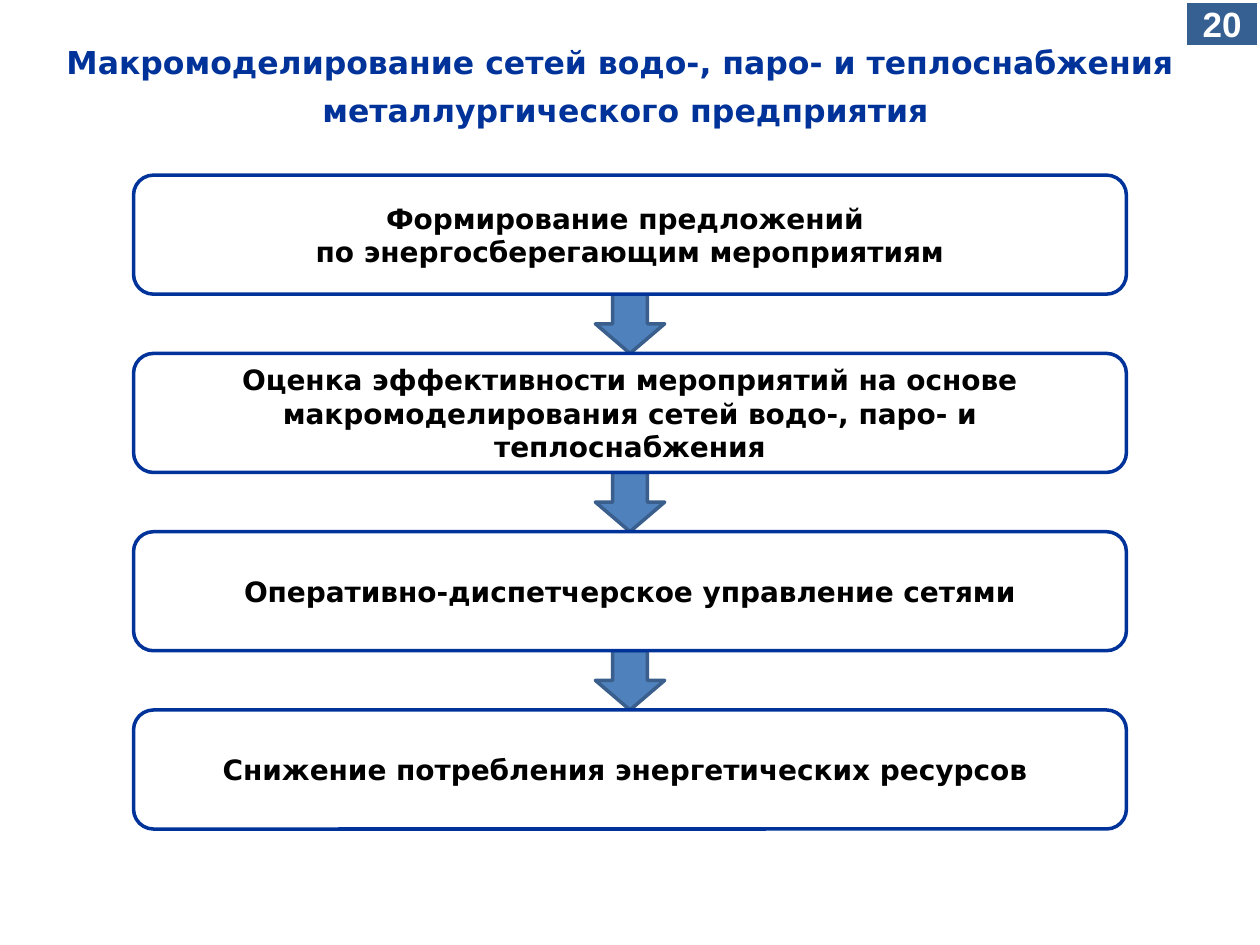
from pptx import Presentation
from pptx.dml.color import RGBColor
from pptx.enum.shapes import MSO_SHAPE
from pptx.enum.text import MSO_ANCHOR, PP_ALIGN
from pptx.util import Inches, Pt

COLORS = {
    "navy": "003399",
    "badge": "376092",
    "arrow": "4F81BD",
    "arrow_edge": "3A5F8C",
    "white": "FFFFFF",
    "black": "000000",
}
TITLE = "Макромоделирование сетей водо-, паро- и теплоснабжения \nметаллургического предприятия"
STEPS = [
    "Формирование предложений \nпо энергосберегающим мероприятиям",
    "Оценка эффективности мероприятий на основе макромоделирования сетей водо-, паро- и теплоснабжения",
    "Оперативно-диспетчерское управление сетями",
    "Снижение потребления энергетических ресурсов ",
]


def color(name):
    return RGBColor.from_string(COLORS[name])


def write_text(shape, text, size, font_name, color_name):
    frame = shape.text_frame
    frame.word_wrap = True
    frame.vertical_anchor = MSO_ANCHOR.MIDDLE
    para = frame.paragraphs[0]
    para.text = text
    para.alignment = PP_ALIGN.CENTER
    para.font.size = Pt(size)
    para.font.name = font_name
    para.font.bold = True
    para.font.color.rgb = color(color_name)
    return para


def add_figure(page, kind, box, fill, edge, width):
    shape = page.shapes.add_shape(kind, *(Inches(length) for length in box))
    shape.shadow.inherit = False
    shape.fill.solid()
    shape.fill.fore_color.rgb = color(fill)
    shape.line.color.rgb = color(edge)
    shape.line.width = Pt(width)
    return shape


def place_title(page, box):
    title = page.shapes.title
    title.left, title.top, title.width, title.height = (Inches(length) for length in box)
    para = write_text(title, TITLE, 18, "DejaVu Sans", "navy")
    para.line_spacing = Pt(27)


def place_page_number(page, box):
    badge = add_figure(page, MSO_SHAPE.RECTANGLE, box, "badge", "white", 1.5)
    write_text(badge, "20", 20, "Arial", "white")


def place_flow(page, box):
    left, top, width, height = box
    arrow_width, gap = 0.55, 0.47
    step_height = (height - gap * (len(STEPS) - 1)) / len(STEPS)
    pitch = step_height + gap
    arrow_left = left + (width - arrow_width) / 2
    for index in range(len(STEPS) - 1):
        arrow_top = top + index * pitch + step_height
        arrow_box = (arrow_left, arrow_top, arrow_width, gap)
        add_figure(page, MSO_SHAPE.DOWN_ARROW, arrow_box, "arrow", "arrow_edge", 2)
    for index, text in enumerate(STEPS):
        step_box = (left, top + index * pitch, width, step_height)
        step = add_figure(page, MSO_SHAPE.ROUNDED_RECTANGLE, step_box, "white", "navy", 2)
        write_text(step, text, 16, "DejaVu Sans", "black")


def main():
    deck = Presentation()
    deck.slide_width, deck.slide_height = Inches(10), Inches(7.5)
    page = deck.slides.add_slide(deck.slide_layouts[5])
    place_title(page, (0.2, 0.21, 9.53, 0.87))
    place_page_number(page, (9.41, 0.01, 0.58, 0.36))
    place_flow(page, (1.06, 1.39, 7.88, 5.19))
    deck.save("out.pptx")


if __name__ == "__main__":
    main()
